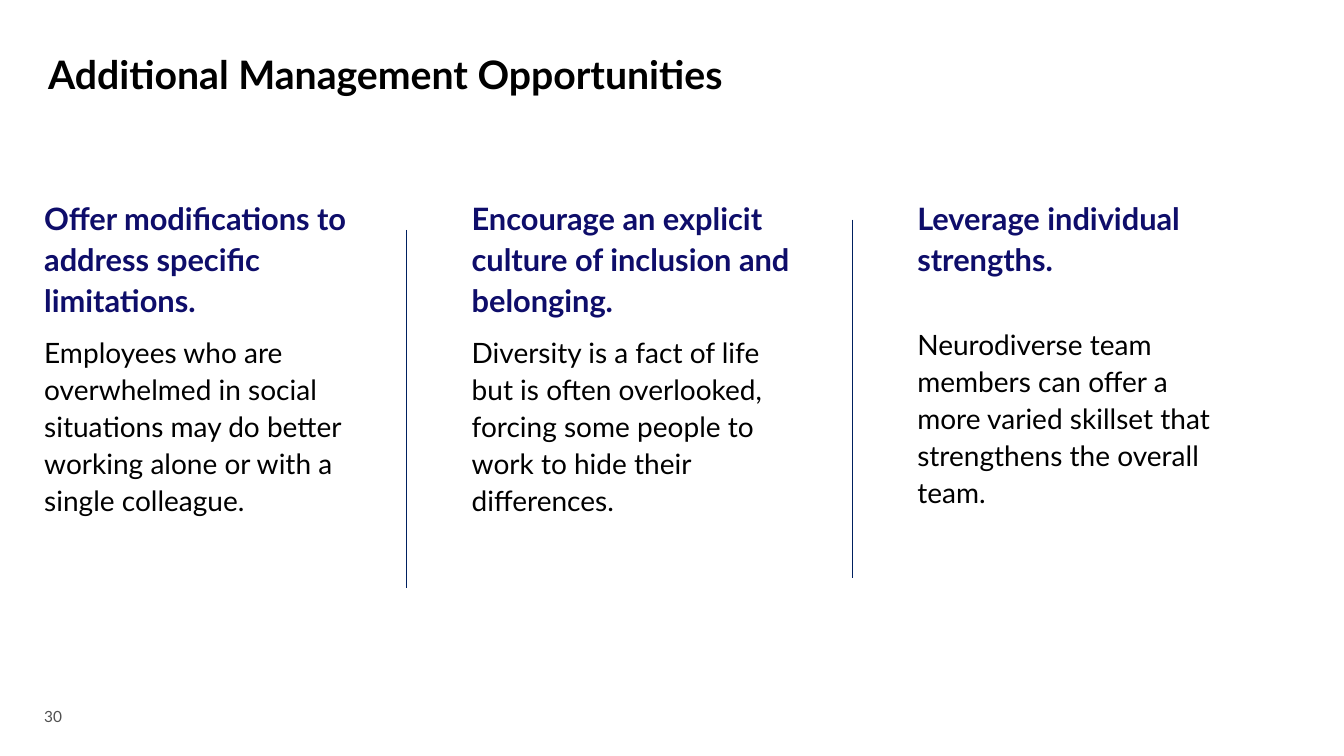
import pptx
import pptx.util
import pptx.dml.color
import pptx.enum.shapes
import pptx.enum.text
import lxml.etree

Inches = pptx.util.Inches
Pt = pptx.util.Pt


def color(code):
    return pptx.dml.color.RGBColor.from_string(code)


def write(para, text, size=20, ink="000000", bold=False, font="Lato",
          line=1.1, after=10):
    para.line_spacing = line
    para.space_after = Pt(after)
    run = para.add_run()
    run.text = text
    run.font.name = font
    run.font.size = Pt(size)
    run.font.bold = bold
    run.font.color.rgb = color(ink)


class Deck:
    navy = "0E0D6A"
    rule = "002060"
    gray = "505050"

    def __init__(self):
        self.prs = pptx.Presentation()
        self.prs.slide_width = Inches(13.33)
        self.prs.slide_height = Inches(7.5)
        self.slide = self.prs.slides.add_slide(self.prs.slide_layouts[6])

    def box(self, left, top, width, height):
        shape = self.slide.shapes.add_textbox(
            Inches(left), Inches(top), Inches(width), Inches(height))
        shape.text_frame.word_wrap = True
        return shape.text_frame

    def title(self, text):
        frame = self.box(0.38, 0.5, 11.49, 0.6)
        write(frame.paragraphs[0], text, size=28, bold=True, line=0.9, after=0)

    def column(self, left, head, body, gap=10):
        frame = self.box(left, 1.9, 3.36, 2.59)
        write(frame.paragraphs[0], head, size=22, ink=self.navy, bold=True,
              after=gap)
        write(frame.add_paragraph(), body)

    def divider(self, left, top):
        line = self.slide.shapes.add_connector(
            pptx.enum.shapes.MSO_CONNECTOR.STRAIGHT,
            Inches(left), Inches(top), Inches(left), Inches(top + 3.55))
        line.line.color.rgb = color(self.rule)
        line.line.width = Pt(0.5)
        props = line.line._get_or_add_ln().getparent()
        lxml.etree.SubElement(props, pptx.oxml.ns.qn("a:effectLst"))

    def number(self, text):
        frame = self.box(0.34, 6.97, 0.5, 0.28)
        frame.vertical_anchor = pptx.enum.text.MSO_ANCHOR.BOTTOM
        write(frame.paragraphs[0], text, size=11, ink=self.gray, line=0.9,
              after=6)


def main():
    deck = Deck()
    deck.title("Additional Management Opportunities")

    # Three columns; the short heading gets a wider gap below
    deck.column(
        0.34, "Offer modifications to address specific limitations.",
        "Employees who are overwhelmed in social situations may do better "
        "working alone or with a single colleague.")
    deck.column(
        4.58, "Encourage an explicit culture of inclusion and belonging.",
        "Diversity is a fact of life but is often overlooked, forcing some "
        "people to work to hide their differences.")
    deck.column(
        9, "Leverage individual strengths.",
        "Neurodiverse team members can offer a more varied skillset that "
        "strengthens the overall team.", gap=33)

    # Dividers between the columns
    for left, top in ((4.03, 2.28), (8.45, 2.18)):
        deck.divider(left, top)

    # Slide number
    deck.number("30")
    deck.prs.save("out.pptx")


if __name__ == "__main__":
    main()
